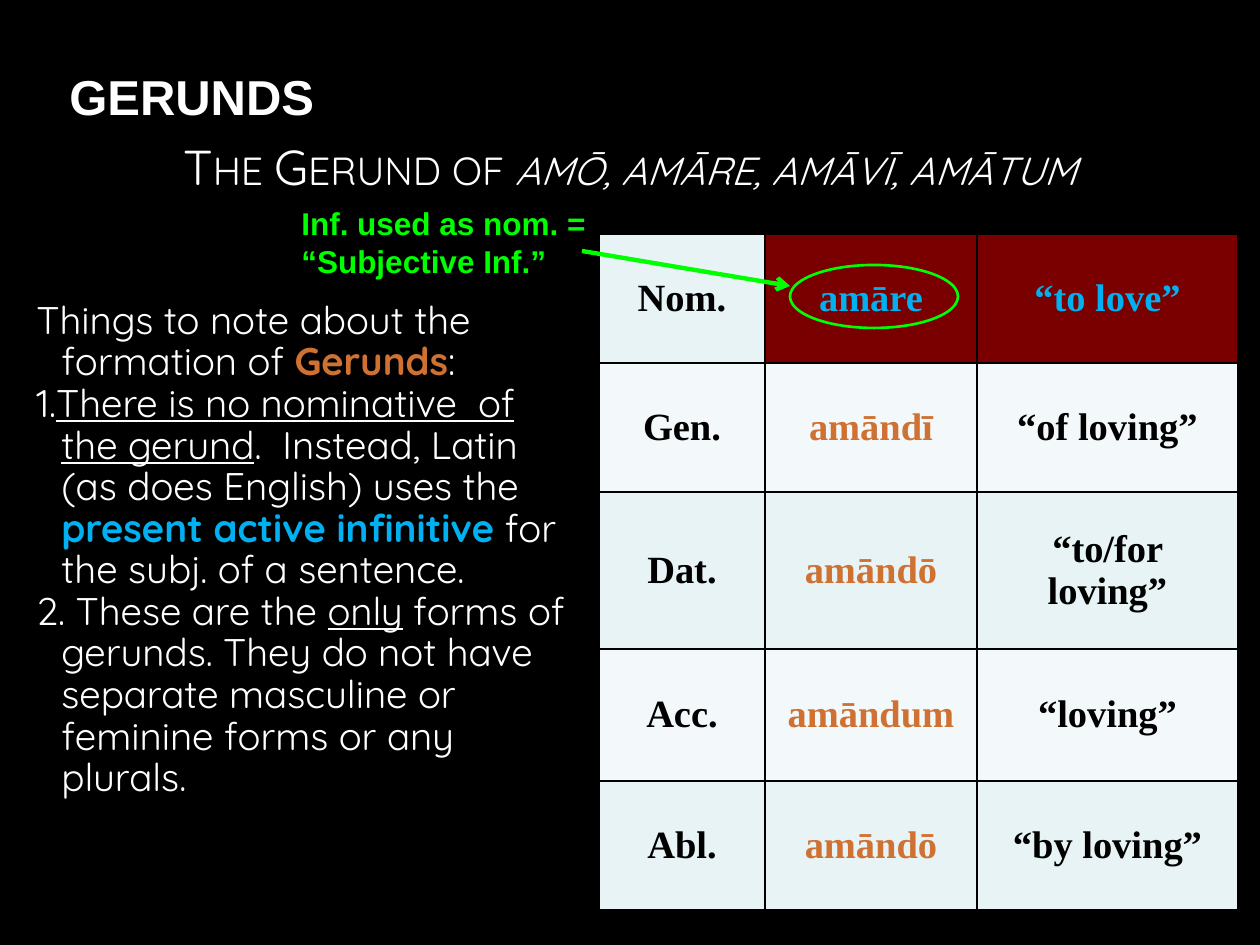
from lxml.etree import SubElement
from pptx import Presentation
from pptx.dml.color import RGBColor
from pptx.enum.shapes import MSO_CONNECTOR, MSO_SHAPE
from pptx.enum.text import MSO_ANCHOR, PP_ALIGN
from pptx.oxml.ns import qn
from pptx.util import Emu, Pt

HUES = {
    "black": "000000", "white": "FFFFFF", "green": "00FF00", "blue": "00B0F0",
    "rust": "CF7133", "red": "FF0000", "mint": "E7F3F4", "pale": "F3F9FA",
}
TITLE = [[("GERUNDS", "white", "b")]]
HEAD = [[("The Gerund of ", "white", "c"), ("amō, amāre, amāvī, amātum", "white", "ci")]]
LABEL = [[("Inf. used as nom. = “Subjective Inf.”", "green", "b")]]
NOTES = [
    [("Things to note about the formation of ", "white", ""),
     ("Gerunds", "rust", "b"), (":", "white", "")],
    [("1.", "white", ""),
     ("There is no nominative  of the gerund", "white", "u"),
     (".  Instead, Latin (as does English) uses the ", "white", ""),
     ("present active infinitive ", "blue", "b"),
     ("for the subj. of a sentence.", "white", "")],
    [("2. These are the ", "white", ""), ("only", "white", "u"),
     (" forms of gerunds. They do not have separate masculine or feminine forms or any plurals.",
      "white", "")],
]
FORMS = [
    ("Nom.", "amāre", "“to love”"),
    ("Gen.", "amāndī", "“of loving”"),
    ("Dat.", "amāndō", "“to/for loving”"),
    ("Acc.", "amāndum", "“loving”"),
    ("Abl.", "amāndō", "“by loving”"),
]
COLS = [166, 212, 261]
ROWS = [129, 129, 157, 132, 129]


def px(num):
    return Emu(round(num * 914400 / 126))


def hue(name):
    return RGBColor.from_string(HUES[name])


def write(frame, paras, face, size, space=None, align=PP_ALIGN.LEFT, hang=0):
    frame.word_wrap = True
    for num, runs in enumerate(paras):
        para = frame.add_paragraph() if num else frame.paragraphs[0]
        para.alignment = align
        para.line_spacing = space
        if hang:
            props = para._p.get_or_add_pPr()
            props.set("marL", str(px(hang)))
            props.set("indent", str(-px(hang)))
        for text, tint, style in runs:
            run = para.add_run()
            run.text = text
            font = run.font
            font.name, font.size = face, Pt(size)
            font.color.rgb = hue(tint)
            font.bold = "b" in style
            font.italic = "i" in style
            font.underline = "u" in style
            if "c" in style:
                run._r.get_or_add_rPr().set("cap", "small")


def add_text(slide, box, *args, anchor=MSO_ANCHOR.TOP, **rest):
    frame = slide.shapes.add_textbox(*map(px, box)).text_frame
    frame.vertical_anchor = anchor
    write(frame, *args, **rest)


def paint(cell, tint, alpha=None):
    props = cell._tc.get_or_add_tcPr()
    for side in ("lnL", "lnR", "lnT", "lnB"):
        edge = SubElement(props, qn("a:" + side), w=str(Pt(1)))
        fill = SubElement(edge, qn("a:solidFill"))
        SubElement(fill, qn("a:srgbClr"), val=HUES["black"])
    cell.fill.solid()
    cell.fill.fore_color.rgb = hue(tint)
    if alpha:
        mark = props.find(qn("a:solidFill")).find(qn("a:srgbClr"))
        SubElement(mark, qn("a:alpha"), val=str(alpha * 1000))


def add_forms(slide):
    box = map(px, (599, 234, sum(COLS), sum(ROWS)))
    table = slide.shapes.add_table(len(ROWS), len(COLS), *box).table
    for col, wide in zip(table.columns, COLS):
        col.width = px(wide)
    for row, tall in zip(table.rows, ROWS):
        row.height = px(tall)
    for r, words in enumerate(FORMS):
        for c, word in enumerate(words):
            cell = table.cell(r, c)
            cell.vertical_anchor = MSO_ANCHOR.MIDDLE
            if r == 0 and c:
                tint = "blue"
                paint(cell, "red", 48)
            else:
                tint = "rust" if c == 1 else "black"
                paint(cell, "pale" if r % 2 else "mint")
            write(cell.text_frame, [[(word, tint, "b")]], "Times New Roman", 22,
                  align=PP_ALIGN.CENTER)


def add_mark(slide):
    ring = slide.shapes.add_shape(MSO_SHAPE.OVAL, *map(px, (790, 265, 168, 63)))
    ring.shadow.inherit = False
    ring.fill.background()
    ring.line.color.rgb = hue("green")
    ring.line.width = Pt(1.5)
    arrow = slide.shapes.add_connector(
        MSO_CONNECTOR.STRAIGHT, *map(px, (582, 251, 790, 286)))
    arrow.line.color.rgb = hue("green")
    arrow.line.width = Pt(2.5)
    SubElement(arrow.line._get_or_add_ln(), qn("a:tailEnd"), type="arrow")
    SubElement(arrow._element.spPr, qn("a:effectLst"))


def main():
    deck = Presentation()
    deck.slide_width, deck.slide_height = px(1260), px(945)
    slide = deck.slides.add_slide(deck.slide_layouts[6])
    back = slide.background.fill
    back.solid()
    back.fore_color.rgb = hue("black")
    add_text(slide, (0, 137, 1260, 81), HEAD, "Quicksand", 28, 0.9,
             align=PP_ALIGN.CENTER)
    add_text(slide, (57, 54, 1034, 84), TITLE, "Arial", 28, anchor=MSO_ANCHOR.MIDDLE)
    add_forms(slide)
    add_text(slide, (24, 295, 558, 517), NOTES, "Quicksand", 22, 0.9, hang=25)
    add_mark(slide)
    add_text(slide, (289, 198, 316, 89), LABEL, "Arial", 18)
    deck.save("out.pptx")


if __name__ == "__main__":
    main()
